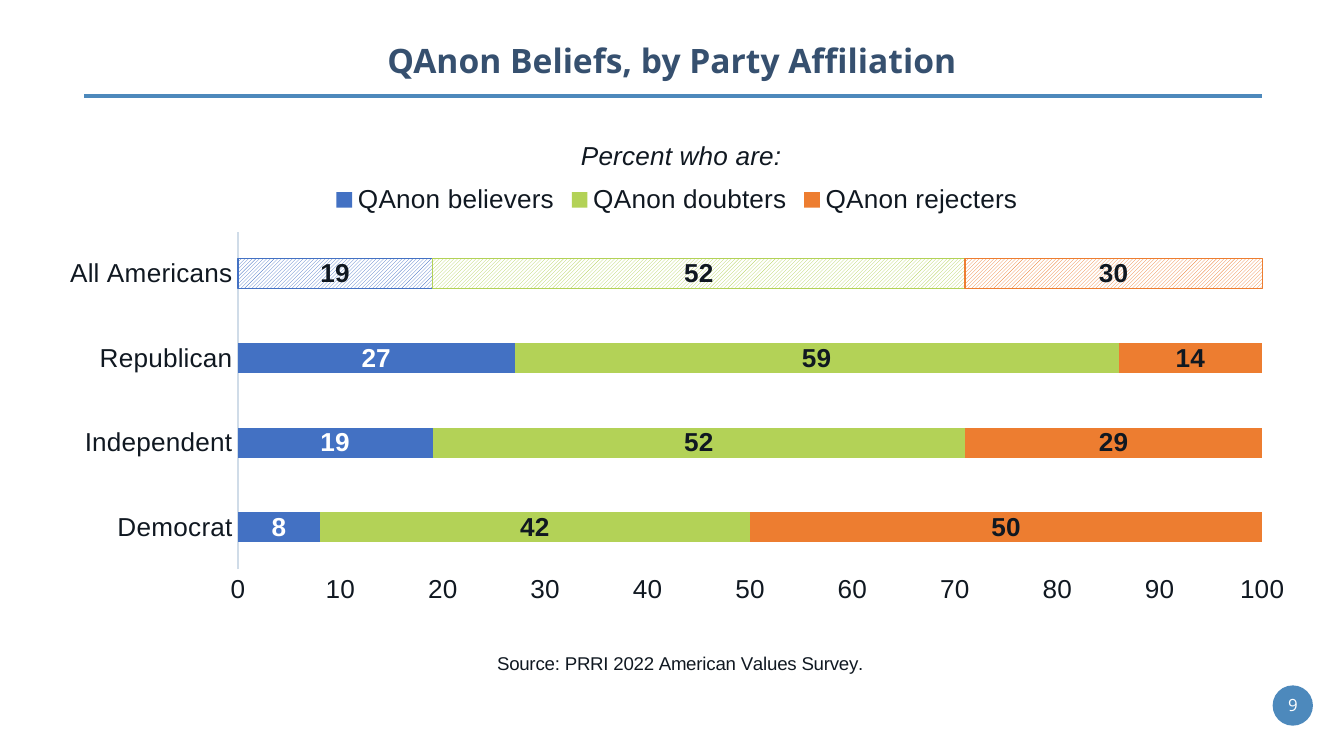
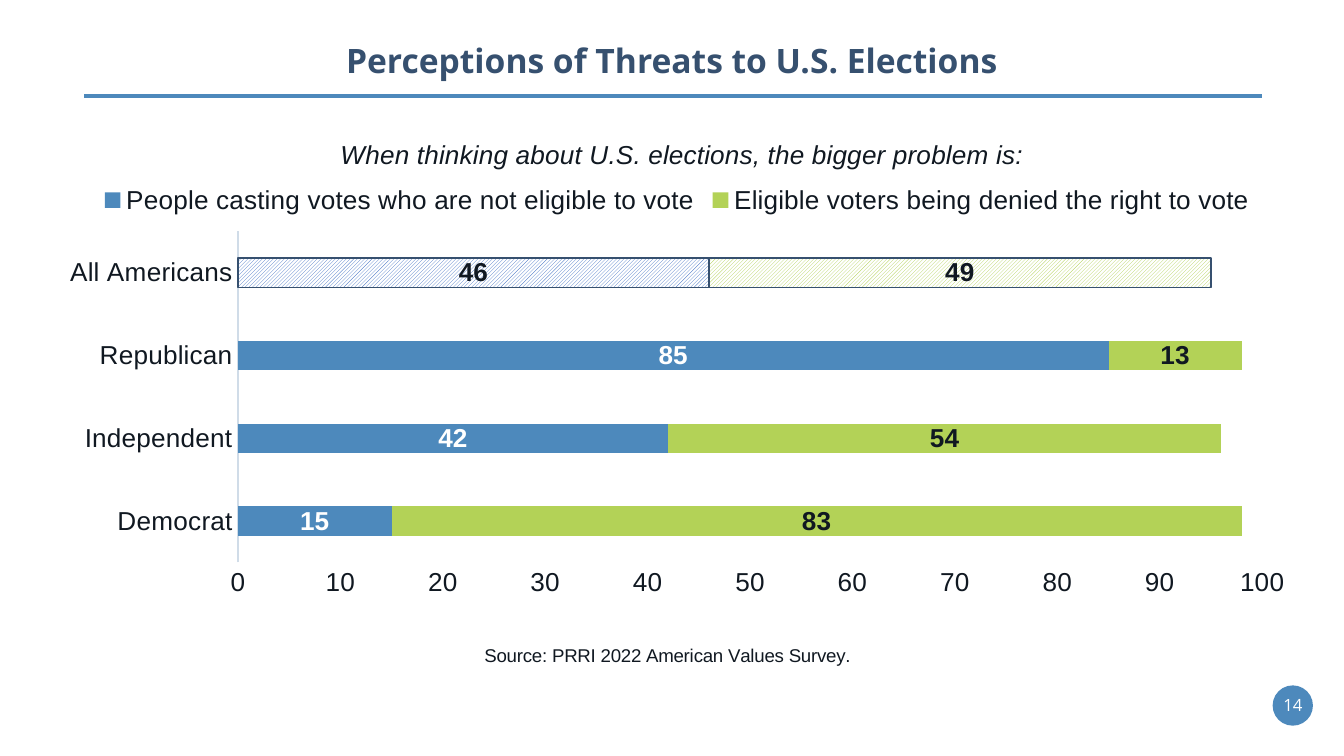
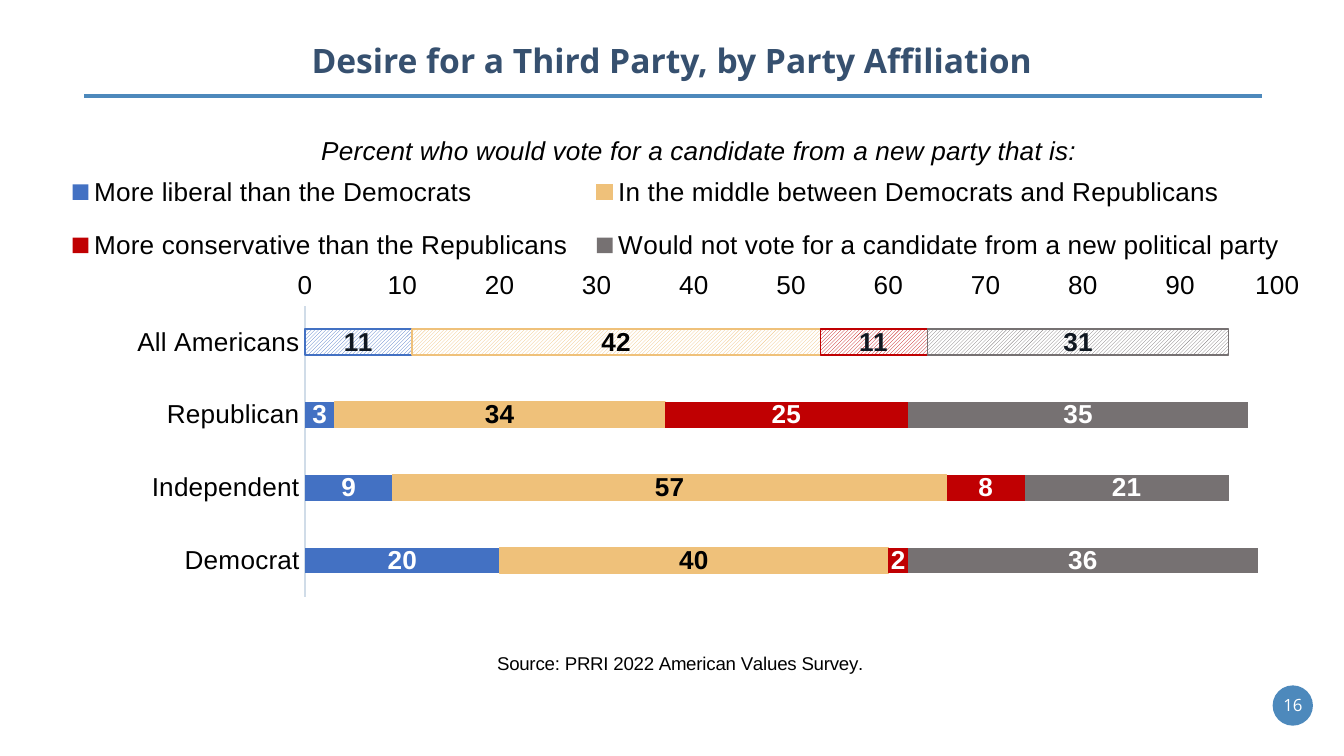
from dataclasses import dataclass
from typing import Optional

import pptx
import pptx.chart.data
import pptx.dml.color
import pptx.enum.chart
import pptx.enum.dml
import pptx.enum.shapes
import pptx.enum.text
import pptx.oxml
import pptx.oxml.ns
import pptx.util
from lxml import etree

Pt = pptx.util.Pt
qn = pptx.oxml.ns.qn


@dataclass(frozen=True)
class Theme:
    accent: str = "4D89BC"
    heading: str = "36506F"
    ink: str = "101821"
    black: str = "000000"
    white: str = "FFFFFF"
    axis: str = "D0DCE8"
    blue: str = "4371C3"
    hatch_blue: str = "4472C4"
    green: str = "B3D257"
    orange: str = "ED7D30"
    gold: str = "EFC17A"
    red: str = "C00002"
    grey: str = "767172"
    heading_font: str = "Open Sans"
    chart_font: str = "Arial"
    heading_size: float = 18
    chart_size: float = 14
    source_size: float = 10
    number_size: float = 9


THEME = Theme()
SLIDE_WIDTH, SLIDE_HEIGHT = 720, 405
AVERAGE = "All Americans"
PARTIES = ["Democrat", "Independent", "Republican", AVERAGE]
SOURCE = "Source: PRRI 2022 American Values Survey."


@dataclass
class Answer:
    name: str
    values: list
    color: str
    label: str = THEME.ink
    hatch: Optional[str] = None
    average_outline: Optional[str] = None
    outlined: bool = False


@dataclass
class Survey:
    """One slide; the layout tuples are fractions of the chart's size."""
    number: int
    heading: str
    question: str
    answers: list
    question_at: tuple
    legend_at: tuple
    plot_at: tuple
    source_at: tuple
    heading_left: float = 12.24
    chart_height: float = 306
    ink: str = THEME.ink
    average_first: bool = False


SURVEYS = [
    Survey(
        9, "QAnon Beliefs, by Party Affiliation", "Percent who are:",
        [
            Answer("QAnon believers", [8, 19, 27, 19], THEME.blue, THEME.white),
            Answer("QAnon doubters", [42, 52, 59, 52], THEME.green),
            Answer("QAnon rejecters", [50, 29, 14, 30], THEME.orange),
        ],
        question_at=(0.42, 0.044), legend_at=(0.224, 0.126),
        plot_at=(0.153, 0.217, 0.809, 0.597), source_at=(0.355, 0.953),
    ),
    Survey(
        14, "Perceptions of Threats to U.S. Elections",
        "When thinking about U.S. elections, the bigger problem is:",
        [
            Answer("People casting votes who are not eligible to vote", [15, 42, 85, 46],
                   THEME.accent, THEME.white, THEME.hatch_blue, THEME.heading),
            Answer("Eligible voters being denied the right to vote", [83, 54, 13, 49],
                   THEME.green, average_outline=THEME.heading),
        ],
        question_at=(0.23, 0.044), legend_at=(0.041, 0.128),
        plot_at=(0.153, 0.22, 0.809, 0.593), source_at=(0.345, 0.952),
        heading_left=45.36, chart_height=301.7,
    ),
    Survey(
        16, "Desire for a Third Party, by Party Affiliation",
        "Percent who would vote for a candidate from a new party that is:",
        [
            Answer("More liberal than the Democrats", [11, 3, 9, 20],
                   THEME.blue, THEME.white),
            Answer("In the middle between Democrats and Republicans", [42, 34, 57, 40],
                   THEME.gold, THEME.black, outlined=True),
            Answer("More conservative than the Republicans", [11, 25, 8, 2],
                   THEME.red, THEME.white),
            Answer("Would not vote for a candidate from a new political party",
                   [31, 35, 21, 36], THEME.grey, THEME.white),
        ],
        question_at=(0.215, 0.035), legend_at=(0.007, 0.079, 0.985, 0.231),
        plot_at=(0.206, 0.348, 0.768, 0.515), source_at=(0.355, 0.953),
        ink=THEME.black, average_first=True,
    ),
]


def rgb(color):
    return pptx.dml.color.RGBColor.from_string(color)


def style_font(font, size, color, name=THEME.chart_font, bold=False, italic=False):
    font.size = Pt(size)
    font.name = name
    font.bold = bold
    font.italic = italic
    font.color.rgb = rgb(color)


def set_line(line, color, width):
    line.color.rgb = rgb(color)
    line.width = Pt(width)


def write_line(frame, text, size, color, **style):
    run = frame.paragraphs[0].add_run()
    run.text = text
    style_font(run.font, size, color, **style)


def place_part(part, fractions, after=None, target=None):
    """Give a chart part a manual layout, inserted behind the child named by after."""
    for previous in part.findall(qn("c:layout")):
        part.remove(previous)
    layout = part.makeelement(qn("c:layout"))
    manual = etree.SubElement(layout, qn("c:manualLayout"))
    settings = [("layoutTarget", target)] if target else []
    settings += [("xMode", "edge"), ("yMode", "edge"), *zip("xywh", fractions)]
    for tag, value in settings:
        etree.SubElement(manual, qn(f"c:{tag}")).set("val", str(value))
    part.insert(part.index(part.find(qn(after))) + 1 if after else 0, layout)


def add_heading(slide, text, left):
    heading = slide.shapes.title
    heading.left, heading.top = Pt(left), Pt(19.44)
    heading.width, heading.height = Pt(SLIDE_WIDTH - 2 * left), Pt(25.2)
    frame = heading.text_frame
    frame.word_wrap = True
    frame.auto_size = pptx.enum.text.MSO_AUTO_SIZE.NONE
    frame.vertical_anchor = pptx.enum.text.MSO_ANCHOR.MIDDLE
    frame.margin_left = frame.margin_right = 0
    frame.margin_top = frame.margin_bottom = Pt(2.88)
    frame.paragraphs[0].alignment = pptx.enum.text.PP_ALIGN.CENTER
    write_line(frame, text, THEME.heading_size, THEME.heading,
               name=THEME.heading_font, bold=True)


def add_heading_rule(slide):
    rule = slide.shapes.add_connector(
        pptx.enum.shapes.MSO_CONNECTOR.STRAIGHT, Pt(676), Pt(51.6), Pt(45.2), Pt(51.6))
    set_line(rule.line, THEME.accent, 2)
    etree.SubElement(rule._element.spPr, qn("a:effectLst"))


def add_page_number(slide, number):
    badge = slide.shapes.add_shape(
        pptx.enum.shapes.MSO_SHAPE.ROUNDED_RECTANGLE,
        Pt(681.8), Pt(367.2), Pt(21.6), Pt(21.6))
    badge.adjustments[0] = 0.5
    badge.shadow.inherit = False
    badge.fill.solid()
    badge.fill.fore_color.rgb = rgb(THEME.accent)
    badge.line.fill.background()

    frame = slide.shapes.add_textbox(Pt(686.9), Pt(368.8), Pt(11.5), Pt(17.3)).text_frame
    frame.word_wrap = False
    frame.margin_left = frame.margin_right = frame.margin_top = frame.margin_bottom = 0
    frame.vertical_anchor = pptx.enum.text.MSO_ANCHOR.MIDDLE
    frame.paragraphs[0].alignment = pptx.enum.text.PP_ALIGN.CENTER
    write_line(frame, str(number), THEME.number_size, THEME.white, name=THEME.heading_font)


def style_answer(bars, answer, average_index):
    """Colour one series and hatch its bar for all Americans."""
    bars.format.fill.solid()
    bars.format.fill.fore_color.rgb = rgb(answer.color)
    if answer.outlined:
        set_line(bars.format.line, answer.color, 0.75)
    bars.invert_if_negative = False
    bars.data_labels.show_value = True
    style_font(bars.data_labels.font, THEME.chart_size, answer.label, bold=True)

    average = bars.points[average_index]
    hatch = average.format.fill
    hatch.patterned()
    hatch.pattern = pptx.enum.dml.MSO_PATTERN.DARK_UPWARD_DIAGONAL
    hatch.fore_color.rgb = rgb(answer.hatch or answer.color)
    hatch.back_color.rgb = rgb(THEME.white)
    set_line(average.format.line, answer.average_outline or answer.color, 0.75)
    if answer.label == THEME.white:
        style_font(average.data_label.font, THEME.chart_size, THEME.ink, bold=True)


def style_axes(chart, survey):
    parties, percent = chart.category_axis, chart.value_axis
    for axis in (parties, percent):
        axis.major_tick_mark = axis.minor_tick_mark = pptx.enum.chart.XL_TICK_MARK.NONE
        axis.has_major_gridlines = False
        style_font(axis.tick_labels.font, THEME.chart_size, survey.ink)
    set_line(parties.format.line, THEME.axis, 0.75)
    if survey.average_first:
        parties.reverse_order = True
        parties.crosses = pptx.enum.chart.XL_AXIS_CROSSES.MAXIMUM
    percent.minimum_scale, percent.maximum_scale, percent.major_unit = 0, 100, 10
    percent.format.line.fill.background()
    source = percent.axis_title
    write_line(source.text_frame, SOURCE, THEME.source_size, survey.ink)
    source.element.find(".//" + qn("a:bodyPr")).set("rot", "0")
    place_part(source.element, survey.source_at, after="c:tx")


def add_survey_chart(slide, survey):
    data = pptx.chart.data.CategoryChartData()
    data.categories = PARTIES[::-1] if survey.average_first else PARTIES
    for answer in survey.answers:
        data.add_series(answer.name, answer.values)
    chart = slide.shapes.add_chart(
        pptx.enum.chart.XL_CHART_TYPE.BAR_STACKED, Pt(23.76), Pt(58.32),
        Pt(678.24), Pt(survey.chart_height), data).chart
    style_font(chart.font, THEME.chart_size, survey.ink)

    chart.has_title = True
    write_line(chart.chart_title.text_frame, survey.question, THEME.chart_size,
               survey.ink, italic=True)
    place_part(chart.chart_title.element, survey.question_at, after="c:tx")

    chart.has_legend = True
    chart.legend.position = pptx.enum.chart.XL_LEGEND_POSITION.TOP
    chart.legend.include_in_layout = False
    style_font(chart.legend.font, THEME.chart_size, survey.ink)
    place_part(chart.legend._element, survey.legend_at, after="c:legendPos")

    style_axes(chart, survey)
    plot = chart.plots[0]
    plot.gap_width, plot.overlap = 182, 100
    average_index = list(plot.categories).index(AVERAGE)
    for bars, answer in zip(plot.series, survey.answers):
        style_answer(bars, answer, average_index)
    place_part(chart.element.find(".//" + qn("c:plotArea")), survey.plot_at, target="inner")


def main():
    deck = pptx.Presentation()
    deck.slide_width, deck.slide_height = Pt(SLIDE_WIDTH), Pt(SLIDE_HEIGHT)
    title_only = deck.slide_layouts[5]
    for survey in SURVEYS:
        slide = deck.slides.add_slide(title_only)
        add_heading_rule(slide)
        add_page_number(slide, survey.number)
        add_heading(slide, survey.heading, survey.heading_left)
        add_survey_chart(slide, survey)
    deck.save("out.pptx")


if __name__ == "__main__":
    main()
